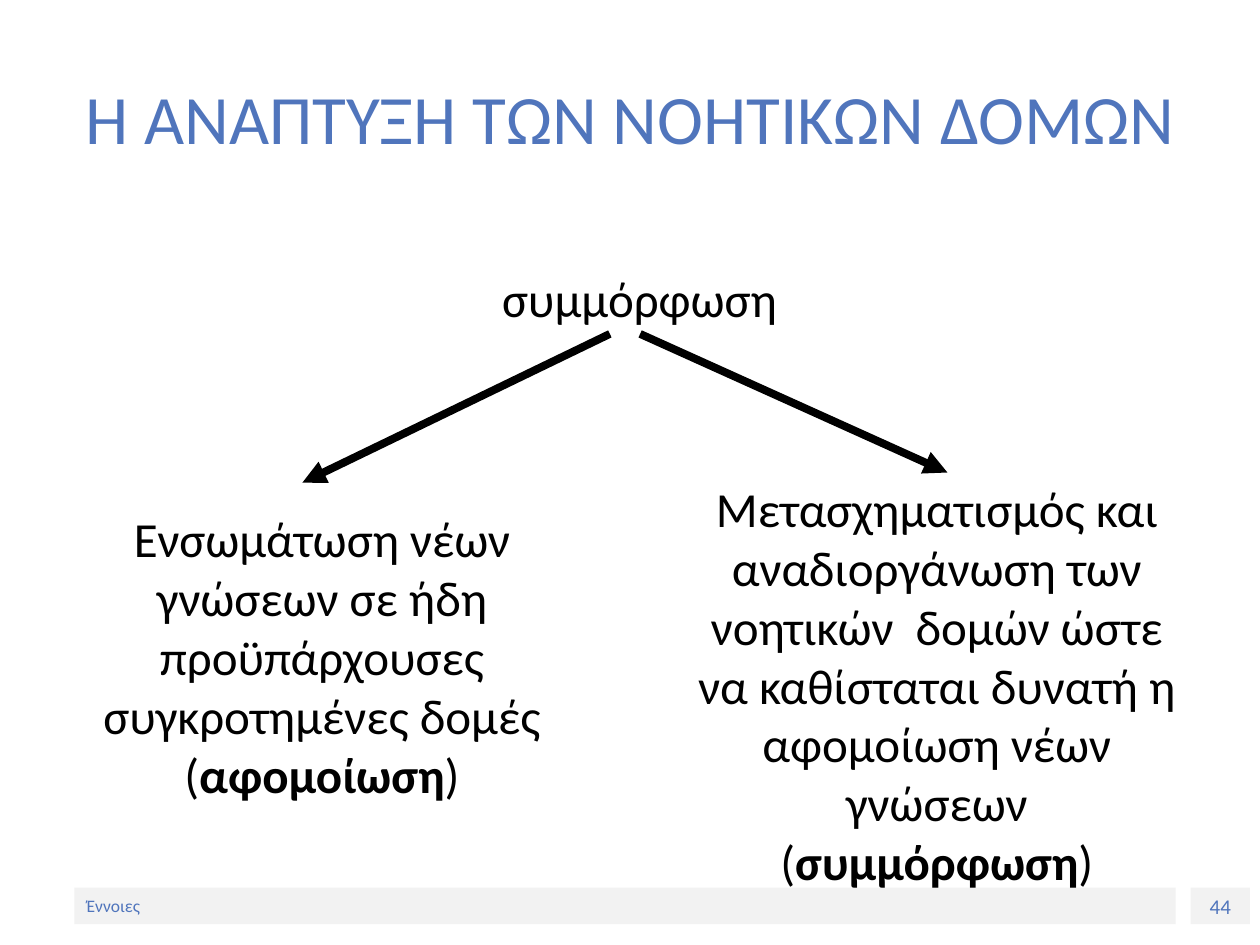
from dataclasses import dataclass

from lxml import etree
from pptx import Presentation
from pptx.dml.color import RGBColor
from pptx.enum.shapes import MSO_CONNECTOR, MSO_SHAPE
from pptx.enum.text import MSO_ANCHOR, MSO_AUTO_SIZE, PP_ALIGN
from pptx.oxml.ns import qn
from pptx.util import Pt

RECT = MSO_SHAPE.RECTANGLE
LINE = MSO_CONNECTOR.STRAIGHT
LEFT, CENTER = PP_ALIGN.LEFT, PP_ALIGN.CENTER
MIDDLE = MSO_ANCHOR.MIDDLE
GROW = MSO_AUTO_SIZE.SHAPE_TO_FIT_TEXT


@dataclass(frozen=True)
class Theme:
    face: str = "Calibri"
    blue: RGBColor = RGBColor(0x50, 0x75, 0xBC)
    black: RGBColor = RGBColor(0, 0, 0)
    bar: RGBColor = RGBColor(0xF2, 0xF2, 0xF2)
    title: float = 39.6
    body: float = 28
    foot: float = 10
    number: float = 12


theme = Theme()


def style(para, size, color, align):
    para.alignment = align
    para.font.name = theme.face
    para.font.size = Pt(size)
    para.font.color.rgb = color


deck = Presentation()
deck.slide_width, deck.slide_height = Pt(720), Pt(540)
slide = deck.slides.add_slide(deck.slide_layouts[5])
shapes = slide.shapes

# Title
title = shapes.title
title.left, title.top, title.width, title.height = Pt(36), Pt(21.6), Pt(648), Pt(90)
title.text_frame.text = "Η ΑΝΑΠΤΥΞΗ ΤΩΝ ΝΟΗΤΙΚΩΝ ΔΟΜΩΝ"
title.text_frame.vertical_anchor = MIDDLE
style(title.text_frame.paragraphs[0], theme.title, theme.blue, CENTER)

# Footer bars
bars = [
    ("44", 680.4, 33.84, theme.number, CENTER),
    ("Έννοιες", 42.48, 629.28, theme.foot, LEFT),
]
for text, x, width, size, align in bars:
    bar = shapes.add_shape(RECT, Pt(x), Pt(507.2), Pt(width), Pt(20.9))
    bar.shadow.inherit = False
    bar.fill.solid()
    bar.fill.fore_color.rgb = theme.bar
    bar.line.fill.background()
    bar.text_frame.text = text
    bar.text_frame.vertical_anchor = MIDDLE
    style(bar.text_frame.paragraphs[0], size, theme.blue, align)

# Concept and its two branches: box, plain text, bold term in brackets
notes = [
    ((19.44, 287.28, 329.04, 175.68),
     "Ενσωμάτωση νέων γνώσεων σε ήδη προϋπάρχουσες συγκροτημένες δομές ",
     "αφομοίωση"),
    ((382.32, 270, 306, 244.8),
     "Μετασχηματισμός και αναδιοργάνωση των νοητικών  δομών ώστε "
     "να καθίσταται δυνατή η αφομοίωση νέων γνώσεων\v",
     "συμμόρφωση"),
    ((167.04, 149.76, 396.72, 41.04), "συμμόρφωση", None),
]
for place, text, term in notes:
    box = shapes.add_textbox(*map(Pt, place))
    frame = box.text_frame
    frame.word_wrap = True
    frame.auto_size = GROW
    para = frame.paragraphs[0]
    para.text = text
    style(para, theme.body, theme.black, CENTER)
    if term:
        for part in ("(", term, ")"):
            run = para.add_run()
            run.text = part
            run.font.bold = part == term

# Arrows from the concept to its branches
for ends in [(348.5, 190.8, 172.8, 275.8), (365.8, 190.8, 541.4, 270)]:
    arrow = shapes.add_connector(LINE, *map(Pt, ends))
    arrow.line.color.rgb = theme.black
    arrow.line.width = Pt(4.5)
    etree.SubElement(arrow.line._get_or_add_ln(), qn("a:tailEnd"), type="triangle")
    etree.SubElement(arrow._element.spPr, qn("a:effectLst"))

deck.save("out.pptx")
